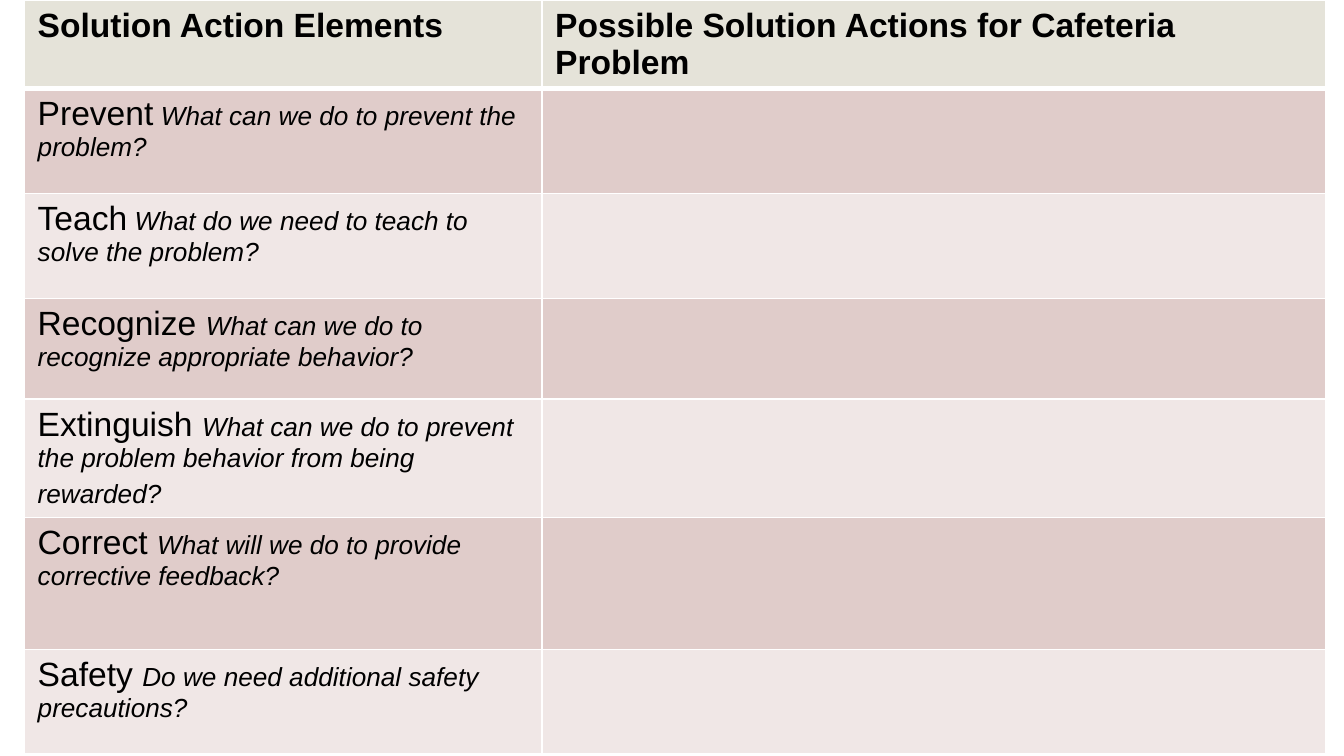
"""Build a slide with a table of solution actions for a cafeteria problem."""
from lxml.etree import SubElement as add_node
from pptx import Presentation
from pptx.dml.color import RGBColor
from pptx.oxml.ns import qn
from pptx.util import Pt


def color(code):
    """Turn a hex string into a colour."""
    return RGBColor.from_string(code)


class SlideBuilder:
    """Hold the style and the current slide."""

    FONT, INK, LINE = "Arial", "000000", "FFFFFF"
    HEADER, BANDS = "E5E3D9", ("E0CCCA", "F0E7E6")
    MARGINS = {"margin_left": 7.2, "margin_right": 7.2, "margin_top": 3.6, "margin_bottom": 3.6}
    HEADING = {"size": Pt(18), "bold": True, "italic": False}
    TERM = {"size": Pt(18), "bold": False, "italic": False}
    GAP = {"size": Pt(14), "bold": False, "italic": False}
    QUESTION = {"size": Pt(14), "bold": False, "italic": True}

    def __init__(self, deck):
        """Start a blank slide."""
        self.page = deck.slides.add_slide(deck.slide_layouts[6])

    def table(self, left, top, widths, heights):
        """Add a table with the given column widths and row heights."""
        size = [Pt(value) for value in (left, top, sum(widths), sum(heights))]
        grid = self.page.shapes.add_table(len(heights), len(widths), *size).table
        for column, width in zip(grid.columns, widths):
            column.width = Pt(width)
        for row, height in zip(grid.rows, heights):
            row.height = Pt(height)
        return grid

    def borders(self, cell, widths):
        """Draw the left, right, top and bottom borders of a cell."""
        properties = cell._tc.get_or_add_tcPr()
        for side, width in zip("LRTB", widths):
            line = add_node(properties, qn(f"a:ln{side}"), w=str(Pt(width)))
            fill = add_node(line, qn("a:solidFill"))
            add_node(fill, qn("a:srgbClr"), val=self.LINE)

    def cell(self, cell, fill, spans, widths):
        """Style a cell and write its formatted spans."""
        self.borders(cell, widths)
        cell.fill.solid()
        cell.fill.fore_color.rgb = color(fill)
        for name, value in self.MARGINS.items():
            setattr(cell, name, Pt(value))
        para = cell.text_frame.paragraphs[0]
        for text, style in spans:
            span = para.add_run()
            span.text = text
            for name, value in {"name": self.FONT, **style}.items():
                setattr(span.font, name, value)
            span.font.color.rgb = color(self.INK)

    def header(self, grid, titles):
        """Fill the header row."""
        for cell, title in zip(grid.rows[0].cells, titles):
            self.cell(cell, self.HEADER, [(title, self.HEADING)], (1, 1, 1, 3))

    def body(self, grid, entries):
        """Fill the banded rows, leaving the answer column empty."""
        for index, spans in enumerate(entries):
            fill = self.BANDS[index % 2]
            widths = (1, 1, 1 if index else 3, 1)
            first, second = grid.rows[index + 1].cells
            self.cell(first, fill, spans, widths)
            self.cell(second, fill, [], widths)


def main():
    """Build and save the deck."""
    deck = Presentation()
    deck.slide_width, deck.slide_height = Pt(720), Pt(405)
    slide = SlideBuilder(deck)
    term, gap, question = slide.TERM, slide.GAP, slide.QUESTION
    grid = slide.table(13, 0, (277.2, 419.8), (36, 56.2, 56.2, 54, 63.4, 70.6, 56.2))
    slide.header(grid, ("Solution Action Elements", "Possible Solution Actions for Cafeteria Problem"))
    slide.body(grid, [
        [("Prevent", term), (" ", gap), ("What can we do to prevent the problem?", question)],
        [("Teach", term), (" ", gap), ("What do we need to teach to solve the problem?", question)],
        [("Recognize ", term), ("What can we do to recognize appropriate behavior?", question)],
        [("Extinguish ", term),
         ("What can we do to prevent the problem behavior from being rewarded?", question), (" ", term)],
        [("Correct ", term), ("What will we do to provide corrective feedback?", question)],
        [("Safety ", term), ("Do we need additional safety precautions?", question)],
    ])
    deck.save("out.pptx")


if __name__ == "__main__":
    main()
